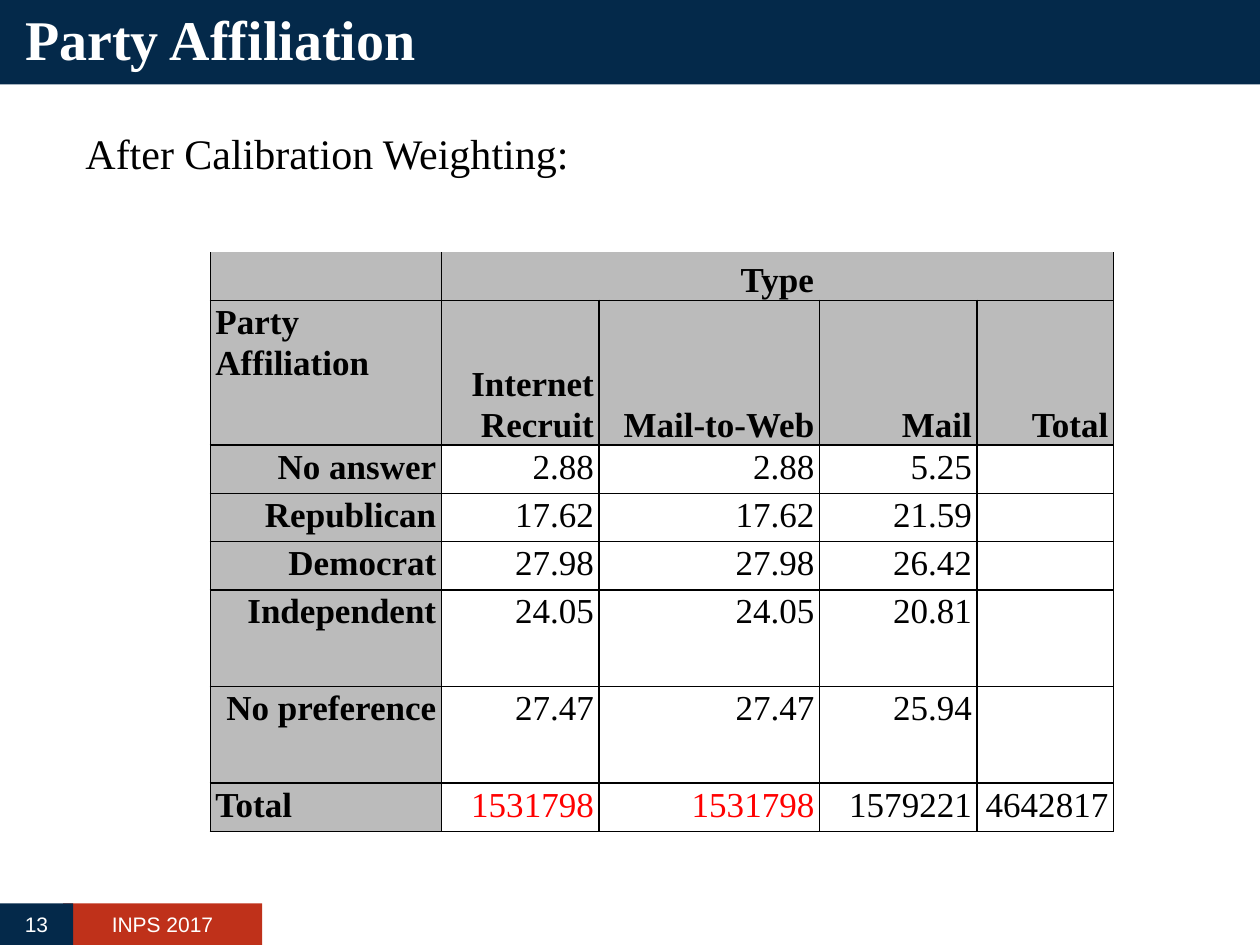
from lxml.etree import SubElement
from pptx import Presentation
from pptx.dml.color import RGBColor
from pptx.enum.shapes import MSO_SHAPE as Shape
from pptx.enum.text import MSO_ANCHOR as Anchor, MSO_AUTO_SIZE as AutoSize, PP_ALIGN as Align
from pptx.oxml.ns import qn
from pptx.util import Inches, Pt

SERIF, SANS = "Times New Roman", "Arial"
NAVY, BRICK, GREY = "04294A", "BF311A", "BBBBBB"
WHITE, BLACK, RED = "FFFFFF", "000000", "FF0000"

COLUMN_UNIT = 1 / 12
COLUMN_SPANS = [22, 15, 21, 15, 13]
ROW_UNIT = 4.6 / 12
ROW_SPANS = [1, 3, 1, 1, 1, 2, 2, 1]
FOOTER_TOP, FOOTER_HEIGHT = 7.17, 0.33

ROWS = [
    ["", "Type", "", "", ""],
    ["Party Affiliation", "Internet Recruit", "Mail-to-Web", "Mail", "Total"],
    ["No answer", "2.88", "2.88", "5.25", ""],
    ["Republican", "17.62", "17.62", "21.59", ""],
    ["Democrat", "27.98", "27.98", "26.42", ""],
    ["Independent", "24.05", "24.05", "20.81", ""],
    ["No preference", "27.47", "27.47", "25.94", ""],
    ["Total", "1531798", "1531798", "1579221", "4642817"],
]


def rgb(value):
    return RGBColor.from_string(value)


def place(item, left, top, width, height):
    item.left, item.top = Inches(left), Inches(top)
    item.width, item.height = Inches(width), Inches(height)


def paint(item, color):
    item.fill.solid()
    item.fill.fore_color.rgb = rgb(color)


def style(paragraph, font_name, size, color, bold=False, align=Align.LEFT):
    font = paragraph.font
    font.name, font.size, font.bold = font_name, Pt(size), bold
    font.color.rgb = rgb(color)
    paragraph.alignment = align


def add_title(slide, text):
    title = slide.shapes.title
    place(title, 0, 0, 10, 0.67)
    paint(title, NAVY)
    frame = title.text_frame
    frame.text = text
    frame.auto_size = AutoSize.NONE
    frame.vertical_anchor = Anchor.MIDDLE
    frame.margin_left = frame.margin_right = Inches(0.2)
    frame.margin_top = frame.margin_bottom = Inches(0.1)
    paragraph = frame.paragraphs[0]
    paragraph.line_spacing = 0.9
    style(paragraph, SERIF, 32, WHITE, bold=True)


def add_lead(slide, text):
    lead = slide.shapes.add_textbox(Inches(0.58), Inches(0.96), Inches(8.83), Inches(0.6))
    frame = lead.text_frame
    frame.word_wrap = True
    frame.text = text
    style(frame.paragraphs[0], SERIF, 24, BLACK)


def add_footer_block(slide, text, left, width, color):
    block = slide.shapes.add_shape(
        Shape.RECTANGLE, Inches(left), Inches(FOOTER_TOP), Inches(width), Inches(FOOTER_HEIGHT))
    block.shadow.inherit = False
    block.line.fill.background()
    paint(block, color)
    frame = block.text_frame
    frame.text = text
    frame.vertical_anchor = Anchor.MIDDLE
    style(frame.paragraphs[0], SANS, 12, WHITE, align=Align.CENTER)


def add_borders(cell, hidden=""):
    properties = cell._tc.get_or_add_tcPr()
    for side in "LRTB":
        line = SubElement(properties, qn(f"a:ln{side}"), w=str(Pt(1)))
        if side in hidden:
            SubElement(line, qn("a:noFill"))
        else:
            fill = SubElement(line, qn("a:solidFill"))
            SubElement(fill, qn("a:srgbClr"), val=BLACK)


def cell_align(row, column):
    if row == 0:
        return Align.CENTER
    if column == 0 and row in (1, len(ROWS) - 1):
        return Align.LEFT
    return Align.RIGHT


def fill_cell(cell, row, column):
    is_header = row < 2 or column == 0
    is_matched_total = row == len(ROWS) - 1 and column in (1, 2)
    add_borders(cell, hidden="T" if row == 0 else "")
    paint(cell, GREY if is_header else WHITE)
    cell.margin_left = cell.margin_right = Inches(0.04)
    cell.margin_top = cell.margin_bottom = 0
    cell.vertical_anchor = Anchor.BOTTOM if row < 2 and column > 0 else Anchor.TOP
    cell.text = ROWS[row][column]
    paragraph = cell.text_frame.paragraphs[0]
    paragraph.line_spacing = 1.07
    paragraph.space_before = paragraph.space_after = Pt(3)
    style(paragraph, SERIF, 20, RED if is_matched_total else BLACK,
          bold=is_header, align=cell_align(row, column))


def add_affiliation_table(slide):
    frame = slide.shapes.add_table(
        len(ROW_SPANS), len(COLUMN_SPANS), Inches(1.67), Inches(2),
        Inches(sum(COLUMN_SPANS) * COLUMN_UNIT), Inches(sum(ROW_SPANS) * ROW_UNIT))
    table = frame.table
    table.horz_banding = False
    for column, span in zip(table.columns, COLUMN_SPANS):
        column.width = Inches(span * COLUMN_UNIT)
    for row, span in zip(table.rows, ROW_SPANS):
        row.height = Inches(span * ROW_UNIT)
    for row in range(len(ROW_SPANS)):
        for column in range(len(COLUMN_SPANS)):
            fill_cell(table.cell(row, column), row, column)
    table.cell(0, 1).merge(table.cell(0, len(COLUMN_SPANS) - 1))


def main():
    deck = Presentation()
    deck.slide_width, deck.slide_height = Inches(10), Inches(7.5)
    slide = deck.slides.add_slide(deck.slide_layouts[5])
    add_title(slide, "Party Affiliation")
    add_lead(slide, "After Calibration Weighting:")
    add_footer_block(slide, "INPS 2017", 0.5, 1.58, BRICK)
    add_footer_block(slide, "13", 0, 0.58, NAVY)
    add_affiliation_table(slide)
    deck.save("out.pptx")


if __name__ == "__main__":
    main()
